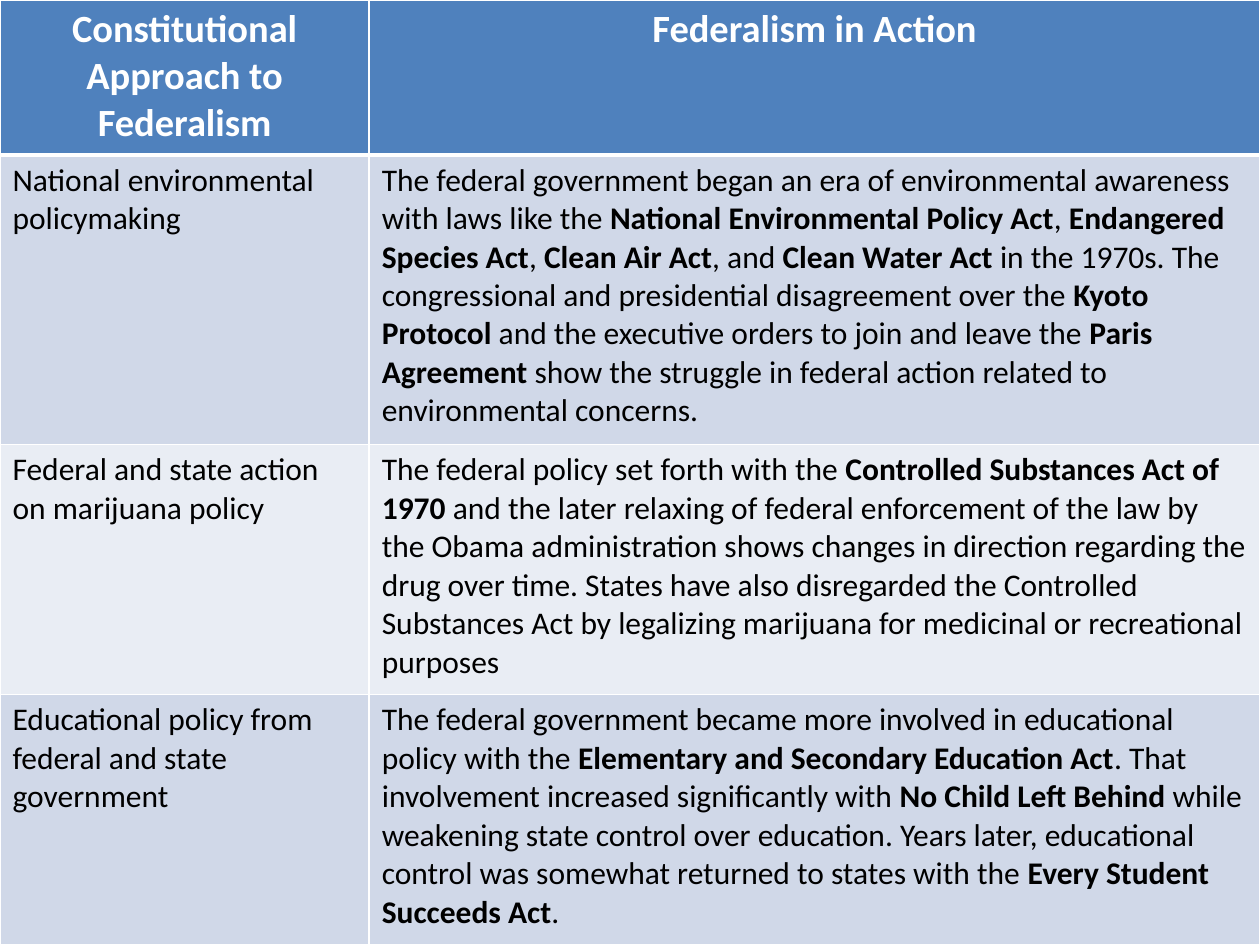
import dataclasses

import pptx
import pptx.dml.color
import pptx.enum.text
import pptx.oxml
import pptx.oxml.ns
import pptx.util

Pt = pptx.util.Pt


@dataclasses.dataclass(frozen=True)
class Theme:
    font: str = "Calibri"
    header_size: float = 22
    body_size: float = 18
    header_fill: str = "4F81BD"
    bands: tuple = ("D0D8E8", "E9EDF4")
    header_text: str = "FFFFFF"
    body_text: str = "000000"
    rule: str = "FFFFFF"
    thin: float = 1
    thick: float = 3


theme = Theme()


def rgb(value):
    return pptx.dml.color.RGBColor.from_string(value)


def draw_border(cell, side, width):
    """Add one cell border; side is L, R, T or B. Call before setting the fill."""
    cell._tc.get_or_add_tcPr().append(pptx.oxml.parse_xml(
        f'<a:ln{side} {pptx.oxml.ns.nsdecls("a")} w="{int(Pt(width))}">'
        f'<a:solidFill><a:srgbClr val="{theme.rule}"/></a:solidFill></a:ln{side}>'
    ))


headings = ["Constitutional Approach to Federalism", "Federalism in Action"]

# Each account alternates plain and bold wording, starting plain.
topics = [
    ("National environmental policymaking", [
        "The federal government began an era of environmental awareness with laws like the ",
        "National Environmental Policy Act", ", ",
        "Endangered Species Act", ", ",
        "Clean Air Act", ", and ",
        "Clean Water Act ",
        "in the 1970s. The congressional and presidential disagreement over the ",
        "Kyoto Protocol ",
        "and the executive orders to join and leave the ",
        "Paris Agreement ",
        "show the struggle in federal action related to environmental concerns.",
    ]),
    ("Federal and state action on marijuana policy", [
        "The federal policy set forth with the ",
        "Controlled Substances Act of 1970 ",
        "and the later relaxing of federal enforcement of the law by the Obama "
        "administration shows changes in direction regarding the drug over time. "
        "States have also disregarded the Controlled Substances Act by legalizing "
        "marijuana for medicinal or recreational purposes",
    ]),
    ("Educational policy from federal and state government", [
        "The federal government became more involved in educational policy with the ",
        "Elementary and Secondary Education Act",
        ". That involvement increased significantly with ",
        "No Child Left Behind ",
        "while weakening state control over education. Years later, educational "
        "control was somewhat returned to states with the ",
        "Every Student Succeeds Act", ".",
    ]),
]
rows = [[[heading] for heading in headings]]
rows += [[[topic], account] for topic, account in topics]

column_widths = [211, 509]
row_heights = [88.5, 165.5, 143, 143]

deck = pptx.Presentation()
deck.slide_width, deck.slide_height = Pt(720), Pt(540)
slide = deck.slides.add_slide(deck.slide_layouts[6])

federalism = slide.shapes.add_table(
    len(rows), len(headings), Pt(0), Pt(0), Pt(720), Pt(540)).table
for column, width in zip(federalism.columns, column_widths):
    column.width = Pt(width)
for row, height in zip(federalism.rows, row_heights):
    row.height = Pt(height)

for row_index, row in enumerate(rows):
    is_header = row_index == 0
    fill = theme.header_fill if is_header else theme.bands[(row_index - 1) % 2]
    for column_index, wording in enumerate(row):
        cell = federalism.cell(row_index, column_index)
        draw_border(cell, "L", theme.thin)
        draw_border(cell, "R", theme.thin)
        draw_border(cell, "T", theme.thick if row_index == 1 else theme.thin)
        draw_border(cell, "B", theme.thick if is_header else theme.thin)
        cell.fill.solid()
        cell.fill.fore_color.rgb = rgb(fill)

        paragraph = cell.text_frame.paragraphs[0]
        if is_header:
            paragraph.alignment = pptx.enum.text.PP_ALIGN.CENTER
        for part_index, part in enumerate(wording):
            run = paragraph.add_run()
            run.text = part
            run.font.name = theme.font
            run.font.size = Pt(theme.header_size if is_header else theme.body_size)
            run.font.bold = is_header or part_index % 2 == 1
            run.font.color.rgb = rgb(theme.header_text if is_header else theme.body_text)

deck.save("out.pptx")
